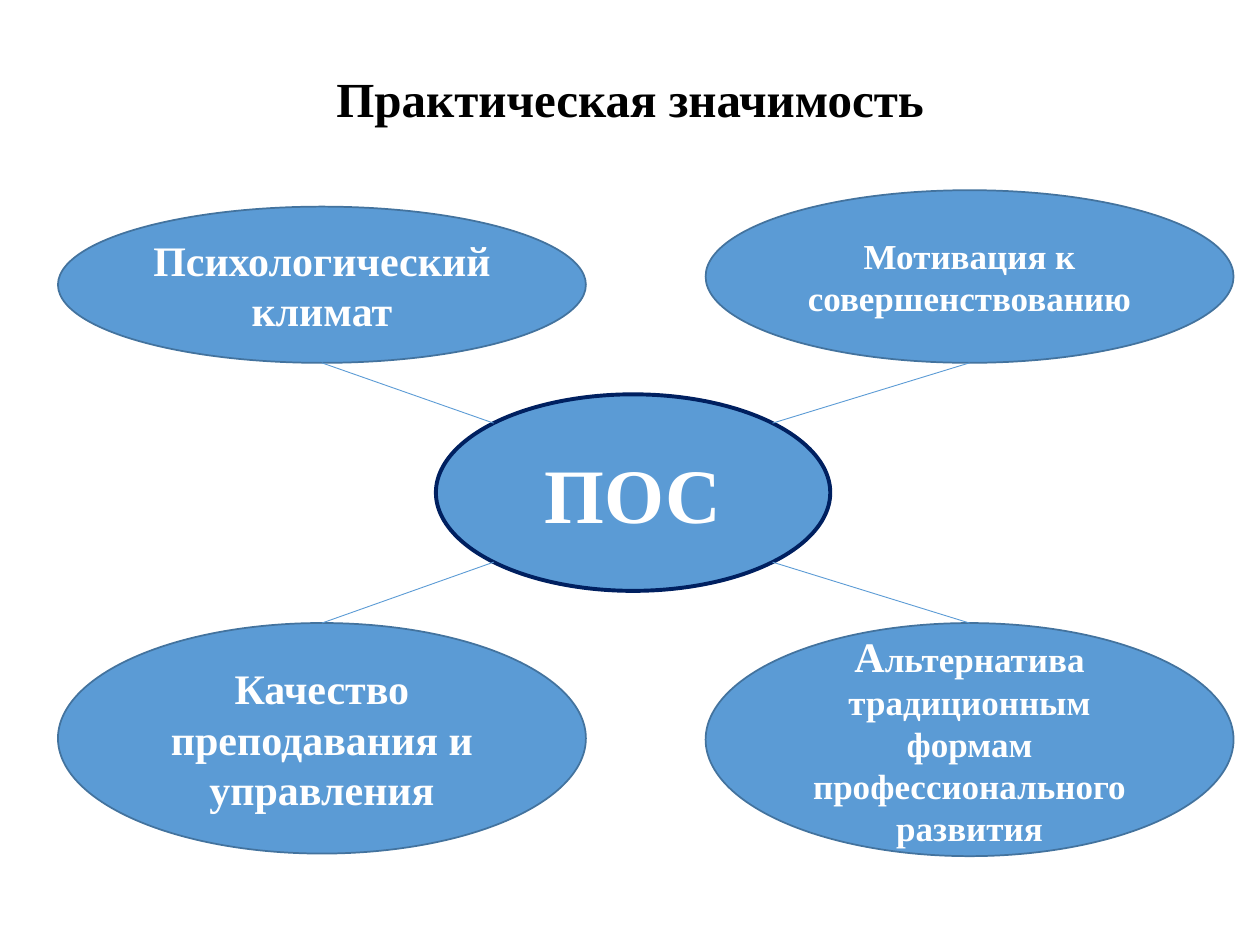
from math import sqrt

from lxml import etree
from pptx import Presentation
from pptx.dml.color import RGBColor
from pptx.enum.shapes import MSO_CONNECTOR, MSO_SHAPE
from pptx.enum.text import MSO_ANCHOR, PP_ALIGN
from pptx.oxml.ns import qn
from pptx.util import Inches, Pt

ELLIPSE = MSO_SHAPE.OVAL
STRAIGHT = MSO_CONNECTOR.STRAIGHT
MIDDLE = MSO_ANCHOR.MIDDLE
BOTTOM = MSO_ANCHOR.BOTTOM
CENTER = PP_ALIGN.CENTER

FONT = "Times New Roman"
BLUE, EDGE, NAVY = "5B9BD5", "43739E", "002060"
WHITE, BLACK = "FFFFFF", "000000"

COLUMNS = 100
CELL = Inches(10) // COLUMNS
TITLE_BOX = (6.9, 5.4, 86.2, 5.2)
MAP_BOX = (4.6, 15.1, 93.3, 52.8)

HUB = (30, 16.2, 31.3, 15.6)
BRANCH_WIDTH = 41.9
BRANCHES = [
    (-1, -1, 12.4, [("Психологический климат", 24)]),
    (1, -1, 13.7, [("Мотивация к совершенствованию", 20)]),
    (-1, 1, 18.3, [("Качество преподавания и управления", 24)]),
    (1, 1, 18.5, [
        ("А", 24),
        ("льтернатива", 20),
        (" ", 24),
        ("традиционным формам профессионального развития", 20),
    ]),
]
UPPER_EDGE, LOWER_EDGE = 13.7, 34.35


def color(value):
    return RGBColor.from_string(value)


def cells(*counts):
    return [round(count * CELL) for count in counts]


def write_text(text_frame, pieces, text_color, anchor):
    text_frame.word_wrap = True
    text_frame.vertical_anchor = anchor
    paragraph = text_frame.paragraphs[0]
    paragraph.alignment = CENTER
    for text, size in pieces:
        run = paragraph.add_run()
        run.text = text
        run.font.name = FONT
        run.font.size = Pt(size)
        run.font.bold = True
        run.font.color.rgb = color(text_color)
    return paragraph


def add_title(slide, box):
    text_frame = slide.shapes.add_textbox(*cells(*box)).text_frame
    text_frame.margin_left = text_frame.margin_right = Inches(0.07)
    text_frame.margin_top = text_frame.margin_bottom = Inches(0.04)
    paragraph = write_text(text_frame, [("Практическая значимость", 28)], BLACK, BOTTOM)
    paragraph.line_spacing = 0.9


def add_ellipse(slide, box, pieces, line_color, line_width):
    shape = slide.shapes.add_shape(ELLIPSE, *cells(*box))
    shape.shadow.inherit = False
    shape.fill.solid()
    shape.fill.fore_color.rgb = color(BLUE)
    shape.line.color.rgb = color(line_color)
    shape.line.width = Pt(line_width)
    write_text(shape.text_frame, pieces, WHITE, MIDDLE)


def add_link(slide, start, end):
    connector = slide.shapes.add_connector(STRAIGHT, *cells(*start, *end))
    connector.line.color.rgb = color(BLUE)
    connector.line.width = Pt(0.5)
    etree.SubElement(connector._element.spPr, qn("a:effectLst"))


def add_map(slide, box):
    left, top, width, height = box
    hub_left, hub_top, hub_width, hub_height = HUB
    hub_box = (left + hub_left, top + hub_top, hub_width, hub_height)
    center_x = hub_box[0] + hub_width / 2
    center_y = hub_box[1] + hub_height / 2
    add_ellipse(slide, hub_box, [("ПОС", 44)], NAVY, 2.25)

    for side, level, branch_height, pieces in BRANCHES:
        branch_left = left if side < 0 else left + width - BRANCH_WIDTH
        inner_edge = top + (UPPER_EDGE if level < 0 else LOWER_EDGE)
        branch_top = inner_edge - branch_height if level < 0 else inner_edge
        branch_box = (branch_left, branch_top, BRANCH_WIDTH, branch_height)
        add_ellipse(slide, branch_box, pieces, EDGE, 1)
        start = (
            center_x + side * hub_width / 2 / sqrt(2),
            center_y + level * hub_height / 2 / sqrt(2),
        )
        add_link(slide, start, (branch_left + BRANCH_WIDTH / 2, inner_edge))


def main():
    presentation = Presentation()
    presentation.slide_width = Inches(10)
    presentation.slide_height = Inches(7.5)
    slide = presentation.slides.add_slide(presentation.slide_layouts[6])
    add_title(slide, TITLE_BOX)
    add_map(slide, MAP_BOX)
    presentation.save("out.pptx")


if __name__ == "__main__":
    main()
